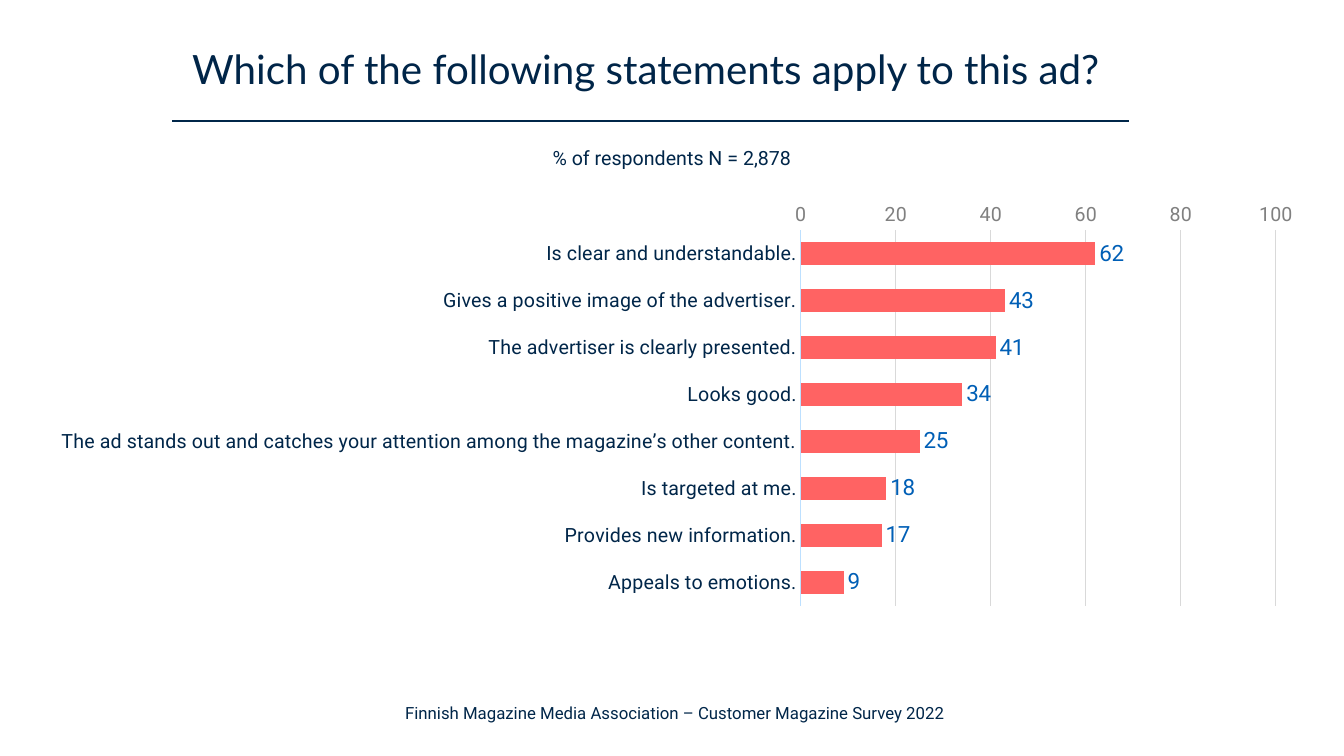
from lxml import etree
from pptx import Presentation
from pptx.chart.data import CategoryChartData
from pptx.dml.color import RGBColor
from pptx.enum.chart import XL_AXIS_CROSSES as Crosses, XL_CHART_TYPE as ChartType
from pptx.enum.chart import XL_LABEL_POSITION as LabelPosition, XL_TICK_MARK as TickMark
from pptx.enum.shapes import MSO_CONNECTOR as Connector
from pptx.enum.text import MSO_ANCHOR as Anchor, PP_ALIGN as Align
from pptx.oxml import parse_xml
from pptx.oxml.ns import nsdecls, qn
from pptx.util import Inches, Pt

NAVY = "002649"


def color(value):
    return RGBColor.from_string(value)


def set_font(font, name, size, value):
    font.name = name
    font.size = Pt(size)
    font.color.rgb = color(value)


presentation = Presentation()
presentation.slide_width = Inches(13.33)
presentation.slide_height = Inches(7.5)
slide = presentation.slides.add_slide(presentation.slide_layouts[6])

texts = [
    ("Finnish Magazine Media Association – Customer Magazine Survey 2022",
     0.03, 6.99, 13.33, 0.18, Anchor.MIDDLE, 0.9, "Roboto", 12, NAVY),
    ("Which of the following statements apply to this ad?",
     1.66, 0.24, 9.49, 0.93, Anchor.MIDDLE, 0.9, "Lato", 28.8, "002548"),
    ("% of respondents N = 2,878",
     0, 1.4, 13.33, 0.34, Anchor.TOP, 1.0, "Roboto", 14, NAVY),
]
for text, left, top, width, height, anchor, spacing, name, size, value in texts:
    box = slide.shapes.add_textbox(Inches(left), Inches(top), Inches(width), Inches(height))
    frame = box.text_frame
    frame.word_wrap = True
    frame.vertical_anchor = anchor
    paragraph = frame.paragraphs[0]
    paragraph.alignment = Align.CENTER
    paragraph.line_spacing = spacing
    run = paragraph.add_run()
    run.text = text
    set_font(run.font, name, size, value)

title_rule = slide.shapes.add_connector(
    Connector.STRAIGHT, Inches(1.71), Inches(1.2), Inches(11.2), Inches(1.2))
title_rule.line.color.rgb = color(NAVY)
title_rule.line.width = Pt(1)
etree.SubElement(title_rule._element.spPr, qn("a:effectLst"))

statements = {
    "Is clear and understandable.": 62,
    "Gives a positive image of the advertiser.": 43,
    "The advertiser is clearly presented.": 41,
    "Looks good.": 34,
    "The ad stands out and catches your attention among the magazine’s other content.": 25,
    "Is targeted at me.": 18,
    "Provides new information.": 17,
    "Appeals to emotions.": 9,
}
chart_data = CategoryChartData(number_format="#,##0")
chart_data.categories = list(statements)
chart_data.add_series("Series 1", list(statements.values()))
chart = slide.shapes.add_chart(
    ChartType.BAR_CLUSTERED, Inches(-1.84), Inches(1.97), Inches(14.96), Inches(4.84),
    chart_data).chart
chart.has_legend = False
chart.has_title = False
set_font(chart.font, "Calibri", 10, NAVY)

plot = chart.plots[0]
plot.gap_width = 100
plot.vary_by_categories = False
series = plot.series[0]
series.format.fill.solid()
series.format.fill.fore_color.rgb = color("FF6363")
labels = series.data_labels
labels.show_value = True
labels.position = LabelPosition.OUTSIDE_END
labels.number_format = "#,##0"
labels.number_format_is_linked = False
set_font(labels.font, "Roboto", 16, "005FB6")

category_axis, value_axis = chart.category_axis, chart.value_axis
for axis, value in ((category_axis, NAVY), (value_axis, "808080")):
    axis.major_tick_mark = TickMark.NONE
    axis.minor_tick_mark = TickMark.NONE
    set_font(axis.tick_labels.font, "Roboto", 14, value)

category_axis.reverse_order = True
category_axis.crosses = Crosses.MAXIMUM
category_axis.format.line.color.rgb = color("BDE0FF")
category_axis.format.line.width = Pt(0.75)

value_axis.minimum_scale = 0
value_axis.maximum_scale = 100
value_axis.major_unit = 20
value_axis.tick_labels.number_format = "#,##0"
value_axis.tick_labels.number_format_is_linked = False
value_axis.format.line.fill.background()
value_axis.has_major_gridlines = True
gridlines = value_axis.major_gridlines.format.line
gridlines.color.rgb = color("D9D9D9")
gridlines.width = Pt(0.75)

plot_area = chart._chartSpace.chart.plotArea
for old_layout in plot_area.findall(qn("c:layout")):
    plot_area.remove(old_layout)
plot_area.insert(0, parse_xml(
    f'<c:layout {nsdecls("c")}><c:manualLayout><c:layoutTarget val="inner"/>'
    '<c:xMode val="edge"/><c:yMode val="edge"/><c:x val="0.654"/><c:y val="0.065"/>'
    '<c:w val="0.315"/><c:h val="0.77"/></c:manualLayout></c:layout>'))

presentation.save("out.pptx")
